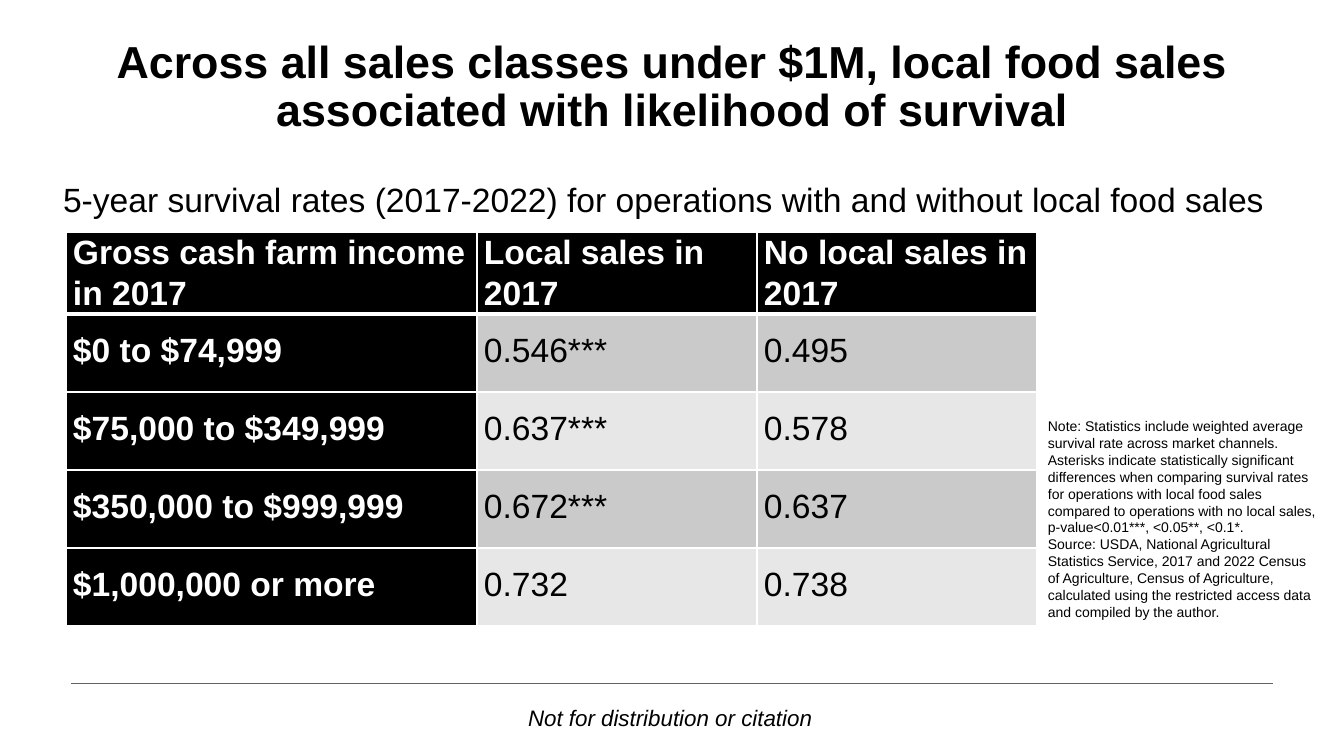
import pptx
import pptx.util
import pptx.dml.color
import pptx.enum.text
import pptx.enum.shapes
import pptx.oxml.ns
import lxml.etree

PX = 914400 / 100.8  # EMU in one px
HUES = {"ink": "000000", "paper": "FFFFFF", "rule": "5D6469",
        "dark": "CACACA", "light": "E7E7E7"}
CENTER = pptx.enum.text.PP_ALIGN.CENTER


def px(*sizes):
    return [pptx.util.Emu(round(size * PX)) for size in sizes]


def style(frame, size, hue="ink", bold=False, italic=False, lead=None, align=None, top=0):
    frame.word_wrap = True
    frame.margin_left = frame.margin_right = frame.margin_bottom = 0
    frame.margin_top = px(top)[0]
    for par in frame.paragraphs:
        par.alignment = align
        if lead:
            par.line_spacing = pptx.util.Pt(lead)
        for run in par.runs:
            font = run.font
            font.name, font.size = "Arial", pptx.util.Pt(size)
            font.bold, font.italic = bold, italic
            font.color.rgb = pptx.dml.color.RGBColor.from_string(HUES[hue])


deck = pptx.Presentation()
deck.slide_width, deck.slide_height = px(1344, 756)
slide = deck.slides.add_slide(deck.slide_layouts[5])

# Title
title = slide.shapes.title
title.left, title.top, title.width, title.height = px(79, 9, 1187, 124)
title.text_frame.text = ("Across all sales classes under $1M, local food sales "
                         "associated with likelihood of survival")
title.text_frame.vertical_anchor = pptx.enum.text.MSO_ANCHOR.TOP
style(title.text_frame, 32, bold=True, lead=34.6, align=CENTER, top=30)

# Rule above the footer
rule = slide.shapes.add_connector(
    pptx.enum.shapes.MSO_CONNECTOR.STRAIGHT, *px(71, 683, 1273, 683))
rule.line.color.rgb = pptx.dml.color.RGBColor.from_string(HUES["rule"])
rule.line.width = pptx.util.Pt(0.5)
lxml.etree.SubElement(rule._element.spPr, pptx.oxml.ns.qn("a:effectLst"))

# Subtitle, note and footer
note = """Note: Statistics include weighted average survival rate across market channels.
Asterisks indicate statistically significant differences when comparing survival rates \
for operations with local food sales compared to operations with no local sales, \
p-value<0.01***, <0.05**, <0.1*.
Source: USDA, National Agricultural Statistics Service, 2017 and 2022 Census of \
Agriculture, Census of Agriculture, calculated using the restricted access data \
and compiled by the author."""
texts = [
    ((63, 178, 1206, 43), dict(size=24, top=1),
     "5-year survival rates (2017-2022) for operations with and without local food sales"),
    ((1048, 417, 270, 205), dict(size=10, top=1), note),
    ((528, 705, 288, 28), dict(size=16, italic=True, lead=18.6),
     "Not for distribution or citation"),
]
for place, look, words in texts:
    box = slide.shapes.add_textbox(*px(*place))
    box.text_frame.text = words
    style(box.text_frame, **look)

# Survival table
rows = [
    ("Gross cash farm income in 2017", "Local sales in 2017", "No local sales in 2017"),
    ("$0 to $74,999", "0.546***", "0.495"),
    ("$75,000 to $349,999", "0.637***", "0.578"),
    ("$350,000 to $999,999", "0.672***", "0.637"),
    ("$1,000,000 or more", "0.732", "0.738"),
]
grid = slide.shapes.add_table(5, 3, *px(66, 232, 971, 394)).table
for col, width in zip(grid.columns, px(411, 280, 280)):
    col.width = width
for line, height in zip(grid.rows, px(82, 78, 78, 78, 78)):
    line.height = height

for r, row in enumerate(rows):
    for c, words in enumerate(row):
        cell = grid.cell(r, c)
        cell.text_frame.text = words
        head = r == 0 or c == 0
        style(cell.text_frame, 24, "paper" if head else "ink", bold=head,
              lead=None if r else 28.6)
        cell.margin_left, cell.margin_top = px(7, 18 if r else 0)
        cell.margin_right = cell.margin_bottom = 0

        # White borders, thick under the header
        props = cell._tc.get_or_add_tcPr()
        for side in "LRTB":
            thick = (r, side) in ((0, "B"), (1, "T"))
            edge = lxml.etree.SubElement(props, pptx.oxml.ns.qn("a:ln" + side),
                                         w=str(pptx.util.Pt(3 if thick else 1)))
            fill = lxml.etree.SubElement(edge, pptx.oxml.ns.qn("a:solidFill"))
            lxml.etree.SubElement(fill, pptx.oxml.ns.qn("a:srgbClr"), val=HUES["paper"])
        hue = "ink" if head else "dark" if r % 2 else "light"
        cell.fill.solid()
        cell.fill.fore_color.rgb = pptx.dml.color.RGBColor.from_string(HUES[hue])

deck.save("out.pptx")
